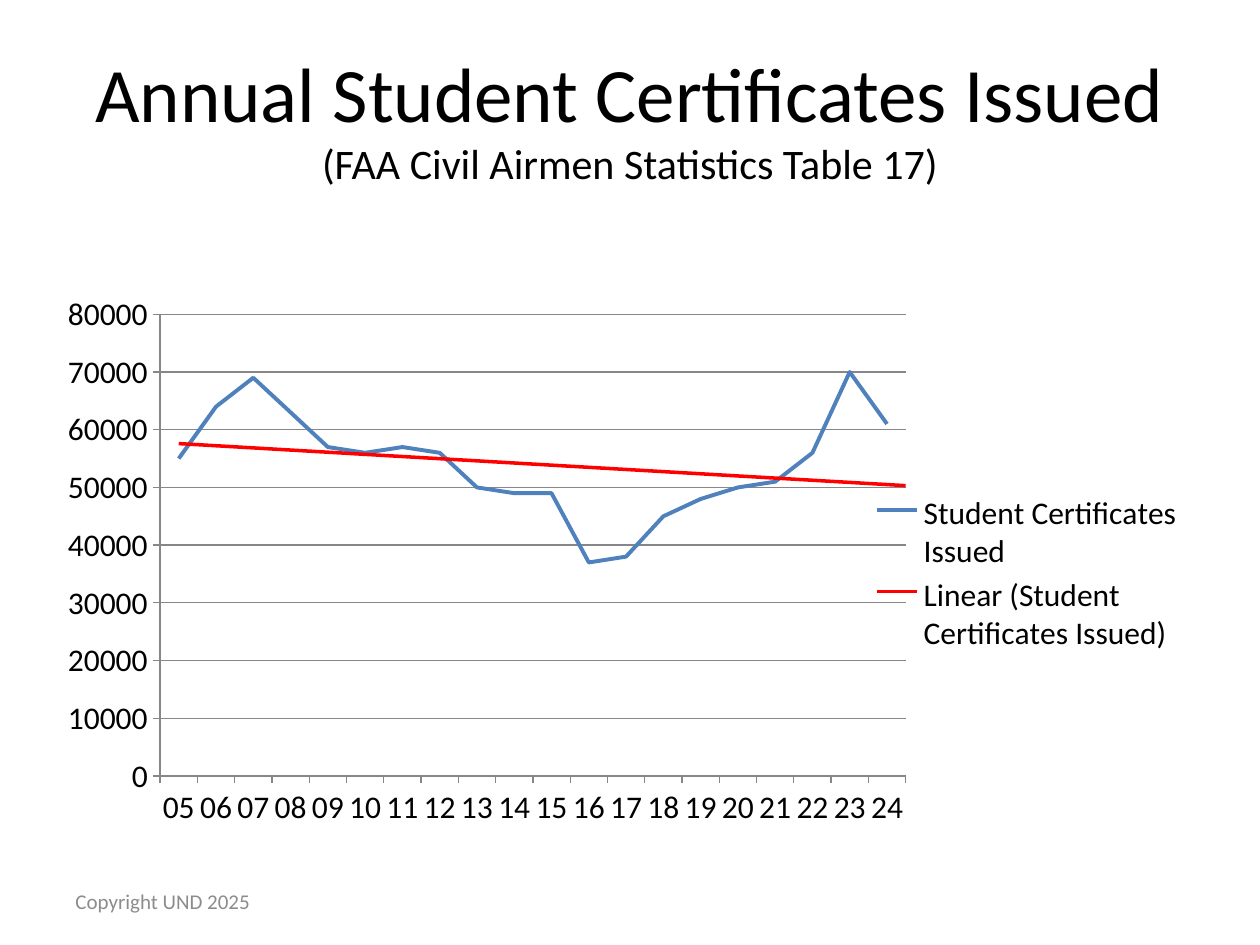
"""Build the slide on annual student pilot certificates."""
from pptx import Presentation, util as u
from pptx.chart.data import CategoryChartData
from pptx.dml.color import RGBColor
from pptx.enum import chart as ch, text
from pptx.oxml import parse_xml
from pptx.oxml.ns import nsdecls, qn

SCALE = 914400 / 126
FONT = "Calibri"
COLORS = {"text": "000000", "muted": "8C8C8C", "axis": "878787",
          "series": "4F81BD", "trend": "FF0000"}
SERIES = "Student Certificates Issued"
THOUSANDS = [55, 64, 69, 63, 57, 56, 57, 56, 50, 49,
             49, 37, 38, 45, 48, 50, 51, 56, 70, 61]


def px(*lengths):
    """Turn pixel lengths into EMU."""
    return [u.Emu(round(n * SCALE)) for n in lengths]


def style(font, size, color):
    """Set face, size and colour of a font."""
    font.name, font.size = FONT, u.Pt(size)
    font.color.rgb = RGBColor.from_string(COLORS[color])


def stroke(line, color, width):
    """Set colour and width of a line."""
    line.color.rgb = RGBColor.from_string(COLORS[color])
    line.width = u.Pt(width)


def add_title(s, box, heading, source):
    """Fill the title placeholder with a heading and a smaller source line."""
    sp = s.shapes.title
    sp.left, sp.top, sp.width, sp.height = px(*box)
    tf = sp.text_frame
    tf.text = f"{heading}\v{source}"
    tf.vertical_anchor = text.MSO_ANCHOR.MIDDLE
    p = tf.paragraphs[0]
    p.alignment = text.PP_ALIGN.CENTER
    for r, size in zip(p.runs, (44, 24)):
        style(r.font, size, "text")


def add_footer(s, box, words):
    """Add the copyright line."""
    tf = s.shapes.add_textbox(*px(*box)).text_frame
    tf.word_wrap = True
    tf.vertical_anchor = text.MSO_ANCHOR.MIDDLE
    tf.text = words
    style(tf.paragraphs[0].runs[0].font, 12, "muted")


def set_layout(parent, index, box, target=""):
    """Place a chart part by fractions of the chart area."""
    for old in parent.findall(qn("c:layout")):
        parent.remove(old)
    modes = '<c:xMode val="edge"/><c:yMode val="edge"/>'
    sizes = "".join(f'<c:{k} val="{v}"/>' for k, v in zip("xywh", box))
    parent.insert(index, parse_xml(
        f'<c:layout {nsdecls("c")}><c:manualLayout>{target}{modes}{sizes}'
        '</c:manualLayout></c:layout>'))


def add_trend(series):
    """Add a linear trend line that runs on to the plot edge."""
    series._element.find(qn("c:cat")).addprevious(parse_xml(
        f'<c:trendline {nsdecls("c", "a")}><c:spPr><a:ln w="{u.Pt(2)}"><a:solidFill>'
        f'<a:srgbClr val="{COLORS["trend"]}"/></a:solidFill></a:ln></c:spPr>'
        '<c:trendlineType val="linear"/><c:forward val="0.5"/>'
        '<c:dispRSqr val="0"/><c:dispEq val="0"/></c:trendline>'))


def add_line_chart(s, box):
    """Add the line chart with its axes, legend and trend."""
    data = CategoryChartData()
    data.categories = [f"{year:02d}" for year in range(5, 25)]
    data.add_series(SERIES, [n * 1000 for n in THOUSANDS])
    chart = s.shapes.add_chart(ch.XL_CHART_TYPE.LINE, *px(*box), data).chart
    style(chart.font, 18, "text")
    chart.has_title = False
    series = chart.plots[0].series[0]
    series.smooth = False
    series.marker.style = ch.XL_MARKER_STYLE.NONE
    stroke(series.format.line, "series", 2.25)
    add_trend(series)

    for axis in (chart.category_axis, chart.value_axis):
        axis.major_tick_mark = ch.XL_TICK_MARK.OUTSIDE
        axis.minor_tick_mark = ch.XL_TICK_MARK.NONE
        stroke(axis.format.line, "axis", 0.75)
    value = chart.value_axis
    value.minimum_scale, value.maximum_scale, value.major_unit = 0, 80000, 10000
    value.tick_labels.number_format = "0"
    value.tick_labels.number_format_is_linked = False
    value.has_major_gridlines = True
    stroke(value.major_gridlines.format.line, "axis", 0.75)

    chart.has_legend = True
    legend = chart.legend
    legend.position = ch.XL_LEGEND_POSITION.RIGHT
    legend.include_in_layout = False
    set_layout(legend._element, 1, (0.73, 0.42, 0.26, 0.27))
    set_layout(chart._chartSpace.chart.plotArea, 0, (0.11, 0.14, 0.64, 0.74),
               '<c:layoutTarget val="inner"/>')


def main():
    """Build and save the slide."""
    prs = Presentation()
    prs.slide_width, prs.slide_height = px(1260, 945)
    s = prs.slides.add_slide(prs.slide_layouts[5])
    add_title(s, (63, 38, 1134, 157), "Annual Student Certificates Issued",
              "(FAA Civil Airmen Statistics Table 17)")
    add_footer(s, (63, 876, 294, 50), "Copyright UND 2025")
    add_line_chart(s, (32, 227, 1165, 624))
    prs.save("out.pptx")


if __name__ == "__main__":
    main()
